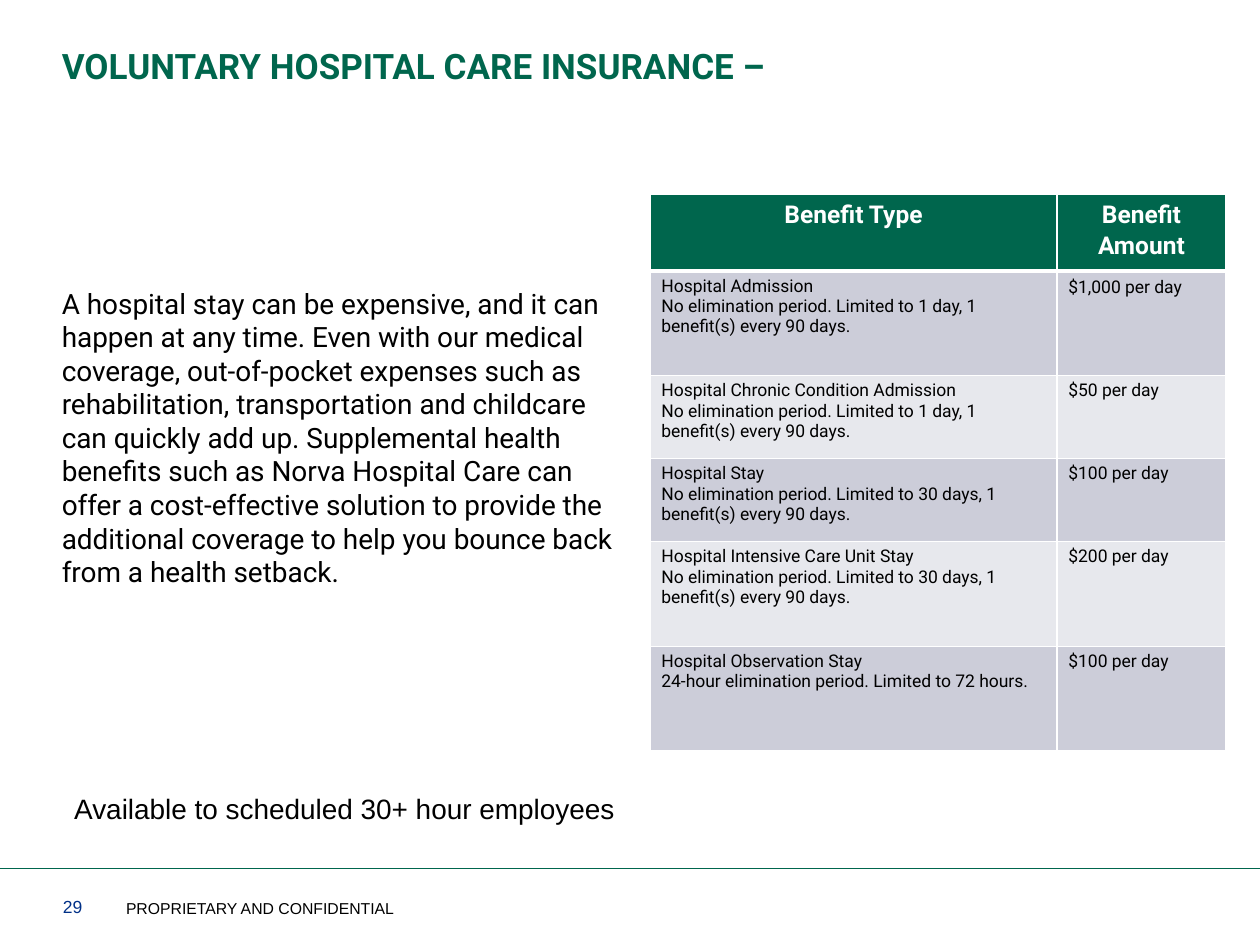
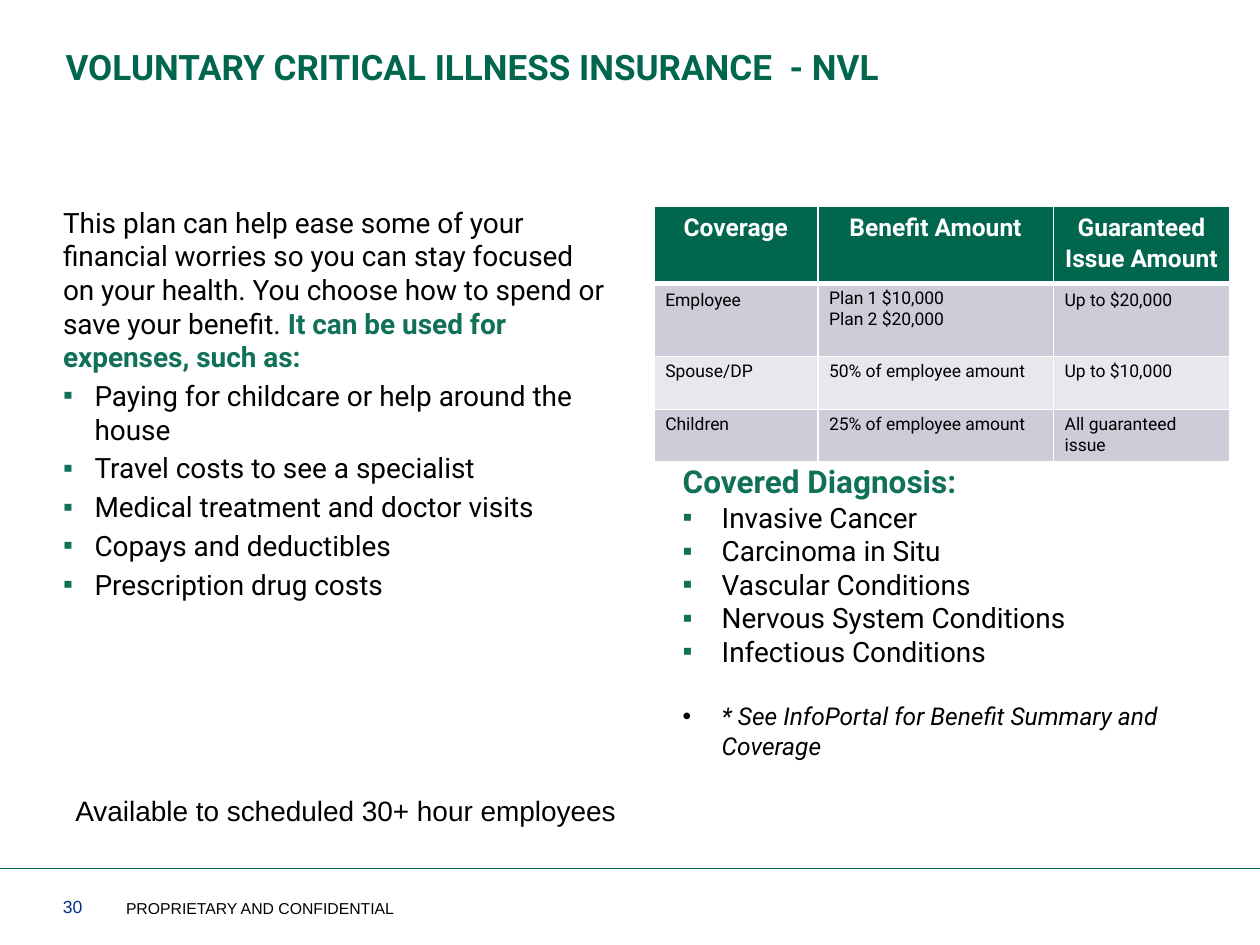
from lxml import etree
from pptx import Presentation
from pptx.dml.color import RGBColor
from pptx.enum import shapes, text
from pptx.oxml.ns import qn
from pptx.util import Inches, Pt

GREEN, LEAF, NAVY = "00664D", "117158", "003087"
BLACK, WHITE = "000000", "FFFFFF"
BANDS = ["CCCDD9", "E7E8ED"]
rgb = RGBColor.from_string


def style(para, size, color, bold=False, face="Roboto"):
    for run in para.runs:
        font = run.font
        font.name, font.size, font.bold = face, Pt(size), bold
        font.color.rgb = rgb(color)


def mark(para, sign, gap, color):
    """Give the paragraph a hanging bullet, or none if sign is empty."""
    props = para._p.get_or_add_pPr()
    props.set("marL", str(Inches(gap)))
    props.set("indent", str(-Inches(gap)))
    if not sign:
        etree.SubElement(props, qn("a:buNone"))
        return
    tint = etree.SubElement(props, qn("a:buClr"))
    etree.SubElement(tint, qn("a:srgbClr"), val=color)
    etree.SubElement(props, qn("a:buFont"), typeface="Arial")
    etree.SubElement(props, qn("a:buChar"), char=sign)


ONCE = "No elimination period. Limited to 1 day, 1 benefit(s) every 90 days."
MONTH = "No elimination period. Limited to 30 days, 1 benefit(s) every 90 days."

pages = [
    {
        "number": "29",
        "title": "VOLUNTARY HOSPITAL CARE INSURANCE –",
        "title_at": (0.49, 0.34, 8.68, 0.39),
        "spacing": 0.9,
        "body_at": (0.49, 2.22, 4.58, 2.72),
        "intro": "A hospital stay can be expensive, and it can happen at any time. "
                 "Even with our medical coverage, out-of-pocket expenses such as "
                 "rehabilitation, transportation and childcare can quickly add up. "
                 "Supplemental health benefits such as Norva Hospital Care can offer "
                 "a cost-effective solution to provide the additional coverage to "
                 "help you bounce back from a health setback.",
        "lead": "",
        "list": [],
        "table_at": (5.16, 1.54),
        "cols": [3.23, 1.34],
        "rows": [0.61, 0.83, 0.66, 0.66, 0.83, 0.83],
        "cells": [
            ["Benefit Type", "Benefit Amount"],
            ["Hospital Admission\n" + ONCE, "$1,000 per day"],
            ["Hospital Chronic Condition Admission\n" + ONCE, "$50 per day"],
            ["Hospital Stay\n" + MONTH, "$100 per day"],
            ["Hospital Intensive Care Unit Stay\n" + MONTH, "$200 per day"],
            ["Hospital Observation Stay\n"
             "24-hour elimination period. Limited to 72 hours.", "$100 per day"],
        ],
        "offer_at": (0.49, 6.23, 4.98, 0.37),
    },
    {
        "number": "30",
        "title": "VOLUNTARY CRITICAL ILLNESS INSURANCE  - NVL",
        "title_at": (0.52, 0.31, 9, 0.39),
        "spacing": 1.0,
        "body_at": (0.5, 1.58, 4.42, 4.32),
        "intro": "This plan can help ease some of your financial worries so you can "
                 "stay focused on your health. You choose how to spend or save your "
                 "benefit. ",
        "lead": "It can be used for expenses, such as:",
        "list": [
            "Paying for childcare or help around the house",
            "Travel costs to see a specialist",
            "Medical treatment and doctor visits",
            "Copays and deductibles",
            "Prescription drug costs",
        ],
        "table_at": (5.19, 1.64),
        "cols": [1.3, 1.87, 1.4],
        "rows": [0.61, 0.58, 0.42, 0.41],
        "cells": [
            ["Coverage", "Benefit Amount", "Guaranteed Issue Amount"],
            ["Employee", "Plan 1 $10,000\nPlan 2 $20,000", "Up to $20,000"],
            ["Spouse/DP", "50% of employee amount", "Up to $10,000"],
            ["Children", "25% of employee amount", "All guaranteed issue"],
        ],
        "offer_at": (0.5, 6.25, 5.16, 0.37),
    },
]

deck = Presentation()
deck.slide_width, deck.slide_height = Inches(10), Inches(7.5)

for page in pages:
    slide = deck.slides.add_slide(deck.slide_layouts[1])

    # Footer rule
    rule = slide.shapes.add_connector(
        shapes.MSO_CONNECTOR.STRAIGHT, 0, Inches(6.89), Inches(10), Inches(6.89))
    rule.line.color.rgb = rgb(GREEN)
    rule.line.width = Pt(0.5)
    etree.SubElement(rule._element.spPr, qn("a:effectLst"))

    # Footer texts and the offer line
    for words, spot, size, color, inset, anchor in [
        (page["number"], (0.5, 7.08, 0.54, 0.25), 10, NAVY, 0, text.MSO_ANCHOR.BOTTOM),
        ("PROPRIETARY AND CONFIDENTIAL", (1, 7.08, 2.35, 0.25), 9, BLACK, 0,
         text.MSO_ANCHOR.BOTTOM),
        ("Available to scheduled 30+ hour employees", page["offer_at"], 16, BLACK, 0.1,
         text.MSO_ANCHOR.TOP),
    ]:
        frame = slide.shapes.add_textbox(*map(Inches, spot)).text_frame
        frame.word_wrap = True
        frame.vertical_anchor = anchor
        frame.margin_left = frame.margin_right = Inches(inset)
        frame.text = words
        style(frame.paragraphs[0], size, color, face="Arial")

    # Title and body placeholders
    title, body = slide.shapes.title, slide.placeholders[1]
    for holder, spot in [(title, page["title_at"]), (body, page["body_at"])]:
        holder.left, holder.top, holder.width, holder.height = map(Inches, spot)
        frame = holder.text_frame
        frame.auto_size = text.MSO_AUTO_SIZE.NONE
        frame.vertical_anchor = text.MSO_ANCHOR.TOP
        frame.margin_left = 0
    title.text_frame.margin_right = 0
    title.text_frame.text = page["title"]
    para = title.text_frame.paragraphs[0]
    para.alignment = text.PP_ALIGN.LEFT
    para.line_spacing = page["spacing"]
    style(para, 20, GREEN, True)

    frame = body.text_frame
    frame.text = "\n".join([page["intro"]] + page["list"])
    for i, para in enumerate(frame.paragraphs):
        mark(para, "▪" if i else "", 0.25 if i else 0, LEAF)
        para.space_before = Pt(3 if i else 0)
        style(para, 16, BLACK)
    if page["lead"]:
        run = frame.paragraphs[0].add_run()
        run.text = page["lead"]
        run.font.name, run.font.size, run.font.bold = "Roboto", Pt(16), True
        run.font.color.rgb = rgb(LEAF)

    # Benefit table
    cols, rows = page["cols"], page["rows"]
    spot = (*page["table_at"], sum(cols), sum(rows))
    table = slide.shapes.add_table(len(rows), len(cols), *map(Inches, spot)).table
    for col, width in zip(table.columns, cols):
        col.width = Inches(width)
    for r, height in enumerate(rows):
        table.rows[r].height = Inches(height)
        for c, words in enumerate(page["cells"][r]):
            cell = table.cell(r, c)
            cell.margin_left = cell.margin_right = Inches(0.09)
            cell.margin_top = cell.margin_bottom = Inches(0.04)
            props = cell._tc.get_or_add_tcPr()
            for side in "LRTB":
                thick = (r, side) in [(0, "B"), (1, "T")]
                edge = etree.SubElement(
                    props, qn("a:ln" + side), w=str(Pt(3 if thick else 1)))
                solid = etree.SubElement(edge, qn("a:solidFill"))
                etree.SubElement(solid, qn("a:srgbClr"), val=WHITE)
            cell.fill.solid()
            cell.fill.fore_color.rgb = rgb(BANDS[(r - 1) % 2] if r else GREEN)
            cell.text = words
            lines = cell.text_frame.paragraphs
            for para in lines:
                if r < 2 and len(lines) == 1:
                    para.line_spacing = 1.07
                if r == 0:
                    para.alignment = text.PP_ALIGN.CENTER
                    style(para, 14, WHITE, True)
                else:
                    style(para, 10, BLACK)

# Covered diagnoses, on the last slide
frame = slide.shapes.add_textbox(*map(Inches, (5.32, 3.62, 4.2, 2.86))).text_frame
frame.word_wrap = True
frame.text = "\n".join([
    "Covered Diagnosis:",
    "Invasive Cancer",
    "Carcinoma in Situ",
    "Vascular Conditions",
    "Nervous System Conditions",
    "Infectious Conditions",
    "* See InfoPortal for Benefit Summary and Coverage",
])
head, *items, note = frame.paragraphs
style(head, 18, LEAF, True)
for para in items:
    mark(para, "▪", 0.31, LEAF)
    style(para, 16, BLACK)
mark(note, "•", 0.31, BLACK)
note.space_before = Pt(19)
style(note, 14, BLACK)
note.runs[0].font.italic = True

deck.save("out.pptx")
